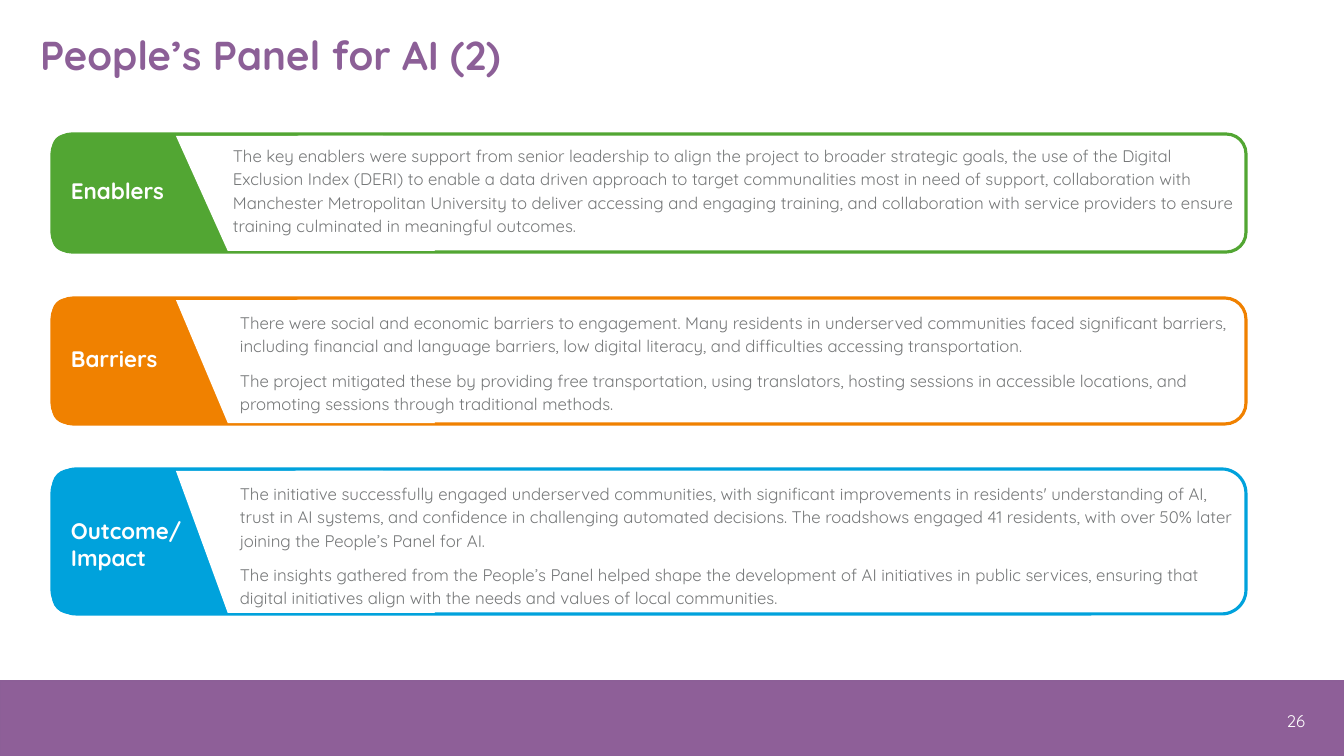
from pptx import Presentation
from pptx.dml.color import RGBColor
from pptx.enum import shapes, text
from pptx.util import Pt

PX = 914400 / 100.8
FONT = "Quicksand"
PURPLE, GREY, WHITE = "8C5F97", "767879", "FFFFFF"
KIND = shapes.MSO_SHAPE

deck = Presentation()
deck.slide_width, deck.slide_height = round(1344 * PX), round(756 * PX)
page = deck.slides.add_slide(deck.slide_layouts[5])


def add_block(kind, bounds, fill=None, line=None, weight=1):
    block = page.shapes.add_shape(kind, *[round(n * PX) for n in bounds])
    block.shadow.inherit = False
    for part, colour in ((block.fill, fill), (block.line.fill, line)):
        if colour:
            part.solid()
            part.fore_color.rgb = RGBColor.from_string(colour)
        else:
            part.background()
    if line:
        block.line.width = Pt(weight)
    return block


def write(box, bounds, lines, size, colour, bold=False, spacing=1.0, after=0,
          align=text.PP_ALIGN.LEFT, anchor=text.MSO_ANCHOR.TOP):
    """Place a text box or placeholder and fill it, one paragraph per line."""
    box.left, box.top, box.width, box.height = [round(n * PX) for n in bounds]
    frame = box.text_frame
    frame.word_wrap = True
    frame.auto_size = text.MSO_AUTO_SIZE.NONE
    frame.vertical_anchor = anchor
    for i, line in enumerate(lines):
        para = frame.add_paragraph() if i else frame.paragraphs[0]
        para.alignment = align
        para.line_spacing = spacing
        para.space_before, para.space_after = Pt(0), Pt(after)
        span = para.add_run()
        span.text = line
        span.font.name, span.font.size, span.font.bold = FONT, Pt(size), bold
        span.font.color.rgb = RGBColor.from_string(colour)


# Title and footer
write(page.shapes.title, (30, 32, 1058, 51), ["People’s Panel for AI (2)"],
      28.8, PURPLE, bold=True, spacing=0.9, anchor=text.MSO_ANCHOR.MIDDLE)
add_block(KIND.RECTANGLE, (0, 681, 1344, 75), "8E5F98", PURPLE)
write(page.shapes.add_textbox(0, 0, 0, 0), (1017, 701, 298, 40), ["26"], 12, WHITE,
      align=text.PP_ALIGN.RIGHT, anchor=text.MSO_ANCHOR.MIDDLE)

# Panels: colour, top, height, label, label box (top, height), body box, body
panels = [
    ("52A633", 134, 118, ["Enablers"], (172, 37), (223, 138, 1031, 102), [
        "The key enablers were support from senior leadership to align the project "
        "to broader strategic goals, the use of the Digital Exclusion Index (DERI) "
        "to enable a data driven approach to target communalities most in need of "
        "support, collaboration with Manchester Metropolitan University to deliver "
        "accessing and engaging training, and collaboration with service providers "
        "to ensure training culminated in meaningful outcomes."]),
    ("F08100", 298, 126, ["Barriers"], (340, 37), (230, 305, 1034, 113), [
        "There were social and economic barriers to engagement. Many residents in "
        "underserved communities faced significant barriers, including financial "
        "and language barriers, low digital literacy, and difficulties accessing "
        "transportation.",
        "The project mitigated these by providing free transportation, using "
        "translators, hosting sessions in accessible locations, and promoting "
        "sessions through traditional methods."]),
    ("00A2DC", 469, 145, ["Outcome/", "Impact"], (512, 65), (230, 476, 1016, 136), [
        "The initiative successfully engaged underserved communities, with "
        "significant improvements in residents' understanding of AI, trust in AI "
        "systems, and confidence in challenging automated decisions. The roadshows "
        "engaged 41 residents, with over 50% later joining the People’s Panel for AI.",
        "The insights gathered from the People’s Panel helped shape the development "
        "of AI initiatives in public services, ensuring that digital initiatives "
        "align with the needs and values of local communities."]),
]
for colour, top, height, label, (label_top, label_height), body_bounds, body in panels:
    add_block(KIND.ROUNDED_RECTANGLE, (52, top, 1194, height), line=colour, weight=2.25)
    tab = add_block(KIND.ROUNDED_RECTANGLE, (52, top, 254, height), fill=colour)
    tab.adjustments[0] = 0.12
    slant = add_block(KIND.FLOWCHART_DATA, (176, top + 2, 259, height - 3), fill=WHITE)
    slant._element.spPr.get_or_add_xfrm().set("flipH", "1")
    write(page.shapes.add_textbox(0, 0, 0, 0), body_bounds, body, 12, GREY,
          spacing=1.15, after=8)
    write(page.shapes.add_textbox(0, 0, 0, 0), (61, label_top, 159, label_height),
          label, 16, WHITE, bold=True)

deck.save("out.pptx")
